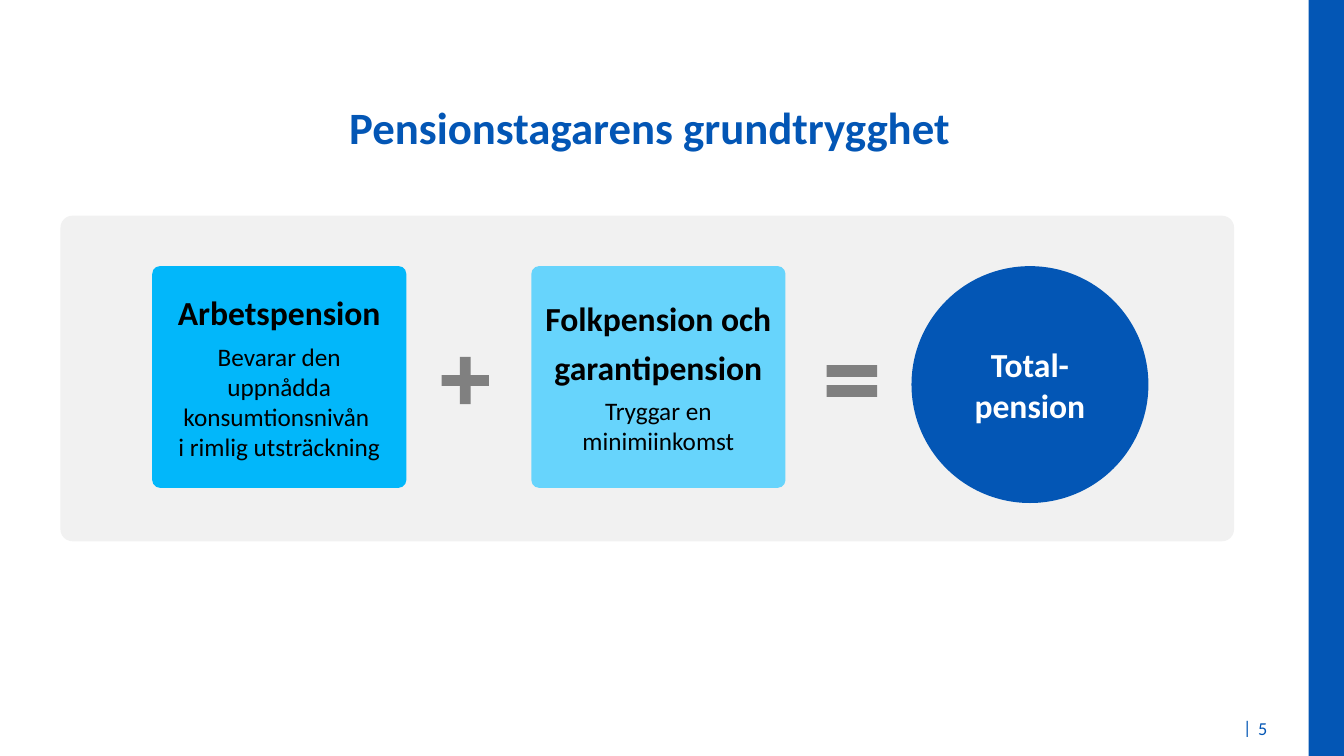
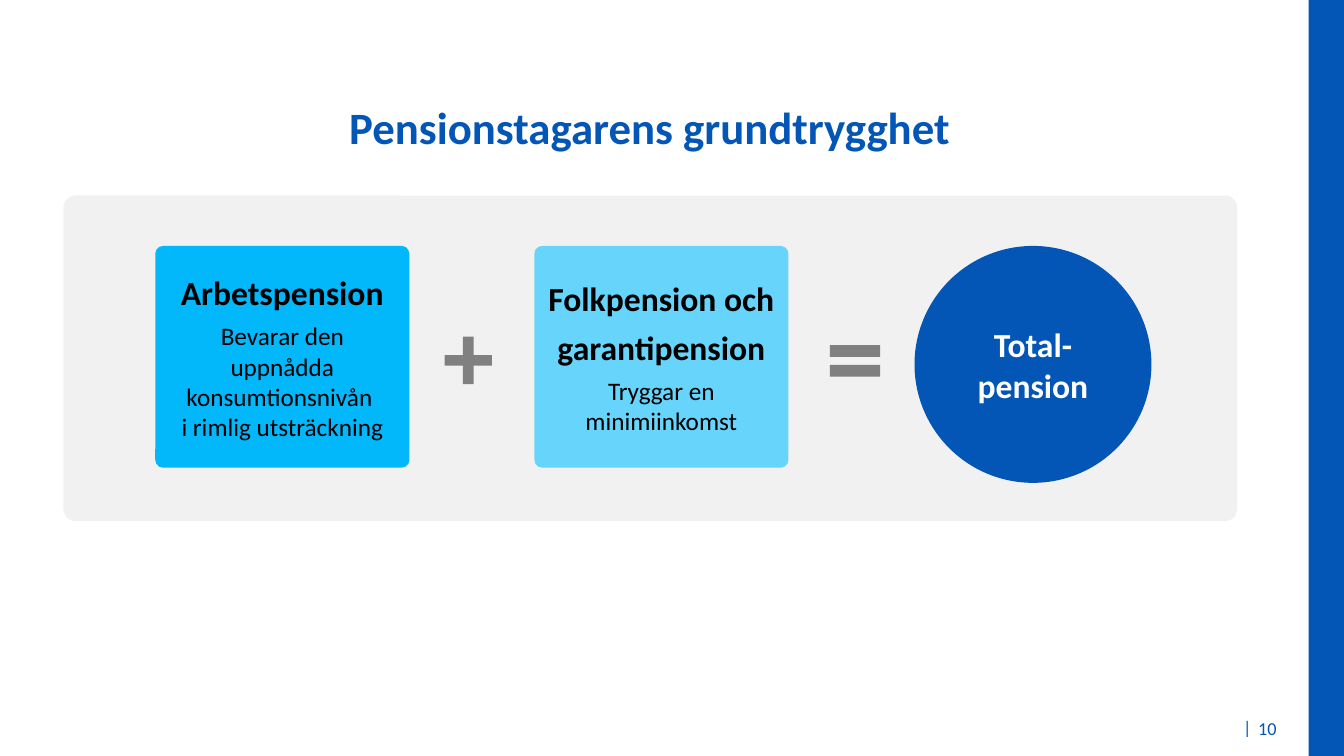
import dataclasses

import pptx
import pptx.dml.color
import pptx.enum.shapes
import pptx.enum.text
import pptx.util

Inches = pptx.util.Inches
Kind = pptx.enum.shapes.MSO_SHAPE
Align = pptx.enum.text.PP_ALIGN
Anchor = pptx.enum.text.MSO_ANCHOR


@dataclasses.dataclass(frozen=True)
class Theme:
    font: str = "Calibri"
    blue: str = "0356B5"
    cyan: str = "02B7FA"
    sky: str = "67D4FC"
    panel: str = "F1F1F1"
    sign: str = "808080"
    black: str = "000000"
    white: str = "FFFFFF"
    title: int = 32
    head: int = 24
    body: int = 18
    foot: int = 13


THEME = Theme()
WIDTH, HEIGHT = 13.33, 7.5


def rgb(code):
    return pptx.dml.color.RGBColor.from_string(code)


def write(frame, lines, size=THEME.body, color=THEME.black, bold=False,
          align=Align.CENTER, anchor=Anchor.MIDDLE, after=0, wrap=True, more=False):
    """Fill a text frame with one paragraph per line, or add to it with more."""
    frame.word_wrap = wrap
    frame.vertical_anchor = anchor
    for index, line in enumerate(lines):
        fresh = index == 0 and not more
        para = frame.paragraphs[0] if fresh else frame.add_paragraph()
        para.text = line
        para.alignment = align
        para.space_after = pptx.util.Pt(after)
        font = para.font
        font.name, font.size, font.bold = THEME.font, pptx.util.Pt(size), bold
        font.color.rgb = rgb(color)


def add_shape(shapes, kind, box, fill, adjust=()):
    shape = shapes.add_shape(kind, *map(Inches, box))
    shape.shadow.inherit = False
    shape.fill.solid()
    shape.fill.fore_color.rgb = rgb(fill)
    shape.line.fill.background()
    for index, value in enumerate(adjust):
        shape.adjustments[index] = value
    return shape


def add_label(slide, text, box, **style):
    label = slide.shapes.add_textbox(*map(Inches, box))
    write(label.text_frame, [text], size=THEME.foot, color=THEME.blue,
          align=Align.LEFT, **style)


def add_card(shapes, left, top, fill, heads, body):
    card = add_shape(shapes, Kind.ROUNDED_RECTANGLE, (left, top, 2.52, 2.2), fill, [0.035])
    write(card.text_frame, heads, size=THEME.head, bold=True, after=6)
    write(card.text_frame, [body], more=True)


def add_sum(slide, left, top):
    """Draw the pension sum on its panel, as one group."""
    shapes = slide.shapes.add_group_shape().shapes
    add_shape(shapes, Kind.ROUNDED_RECTANGLE, (left, top, 11.64, 3.23), THEME.panel, [0.037])
    row = top + 0.5
    add_card(shapes, left + 0.91, row, THEME.cyan, ["Arbetspension"],
             "Bevarar den uppnådda konsumtionsnivån \vi rimlig utsträckning")
    add_shape(shapes, Kind.CROSS, (left + 3.78, top + 1.4, 0.47, 0.47), THEME.sign, [0.388])
    add_card(shapes, left + 4.67, row, THEME.sky, ["Folkpension och", "garantipension"],
             "Tryggar en minimiinkomst")
    total = add_shape(shapes, Kind.OVAL, (left + 8.44, row, 2.35, 2.35), THEME.blue)
    write(total.text_frame, ["Total-", "pension"], size=THEME.head,
          color=THEME.white, bold=True)
    add_shape(shapes, Kind.MATH_EQUAL, (left + 7.51, top + 1.3, 0.68, 0.68),
              THEME.sign, [0.172, 0.118])


def add_slide(deck, title, number):
    slide = deck.slides.add_slide(deck.slide_layouts.get_by_name("Title Only"))
    add_shape(slide.shapes, Kind.RECTANGLE, (WIDTH - 0.35, 0, 0.35, HEIGHT), THEME.blue)
    head = slide.shapes.title
    head.left, head.top, head.width, head.height = map(Inches, (0, 0.92, 12.89, 0.68))
    write(head.text_frame, [title], size=THEME.title, color=THEME.blue, bold=True)
    add_label(slide, "|", (12.23, 7.06, 0.29, 0.35), anchor=Anchor.TOP, wrap=False)
    add_label(slide, str(number), (12.38, 7.05, 0.44, 0.35))
    return slide


def main():
    deck = pptx.Presentation()
    deck.slide_width, deck.slide_height = Inches(WIDTH), Inches(HEIGHT)
    for number, left, top in ((5, 0.6, 2.14), (10, 0.63, 1.94)):
        slide = add_slide(deck, "Pensionstagarens grundtrygghet", number)
        add_sum(slide, left, top)
    deck.save("out.pptx")


if __name__ == "__main__":
    main()
